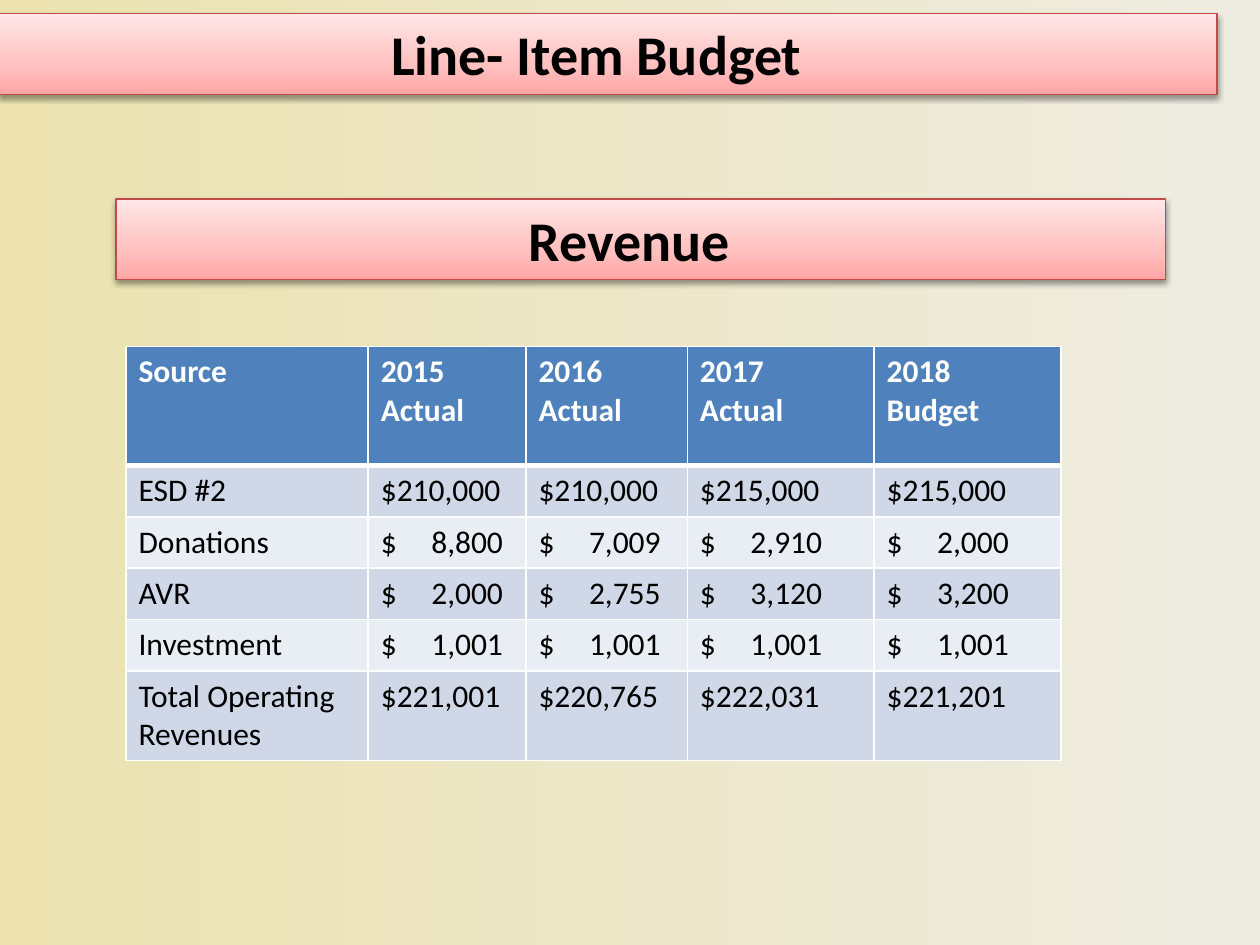
from copy import deepcopy
from dataclasses import dataclass

from lxml import etree
from pptx import Presentation
from pptx.dml.color import RGBColor
from pptx.enum.shapes import MSO_SHAPE
from pptx.enum.text import MSO_ANCHOR, PP_ALIGN
from pptx.oxml.ns import qn
from pptx.util import Inches, Pt

RECTANGLE = MSO_SHAPE.RECTANGLE
CENTER = PP_ALIGN.CENTER
TOP = MSO_ANCHOR.TOP


@dataclass(frozen=True)
class Theme:
    font: str = "Calibri"
    heading_size: int = 32
    table_size: int = 18
    text: str = "000000"
    header_text: str = "FFFFFF"
    header_fill: str = "4F81BD"
    bands: tuple = ("D0D8E8", "E9EDF4")
    grid: str = "FFFFFF"
    banner_line: str = "BF4C48"
    banner_stops: tuple = ((0, "FFA6A5"), (35, "FFC0BF"), (100, "FFE7E7"))
    background_stops: tuple = ((0, "EBE2AF"), (97, "EEECE1"))


THEME = Theme()
COLUMN_WIDTHS = (1.92, 1.25, 1.28, 1.48, 1.48)
ROW_HEIGHTS = (0.95, 0.41, 0.41, 0.41, 0.41, 0.7)
AMOUNT_TAB = Inches(0.97)
REVENUE = (
    ("Source", "2015 Actual", "2016 Actual", "2017\nActual", "2018 Budget"),
    ("ESD #2", "$210,000", "$210,000", "$215,000", "$215,000"),
    ("Donations", "$\t8,800", "$\t7,009", "$\t2,910", "$\t2,000"),
    ("AVR", "$\t2,000", "$\t2,755", "$\t3,120", "$\t3,200"),
    ("Investment", "$\t1,001", "$\t1,001", "$\t1,001", "$\t1,001"),
    ("Total Operating Revenues", "$221,001", "$220,765", "$222,031", "$221,201"),
)


def apply_gradient(fill, owner, stops, angle):
    """Fill with the given (percent, colour) stops; owner holds the fill's XML."""
    fill.gradient()
    fill.gradient_angle = angle
    stop_list = owner.find(".//" + qn("a:gsLst"))
    while len(stop_list) < len(stops):
        stop_list.append(deepcopy(stop_list[-1]))
    for stop, (position, color) in zip(fill.gradient_stops, stops):
        stop.position = position / 100
        stop.color.rgb = RGBColor.from_string(color)


def add_shadow(shape):
    shape.shadow.inherit = False
    effects = shape.element.spPr.find(qn("a:effectLst"))
    shadow = etree.SubElement(effects, qn("a:outerShdw"), blurRad=str(Pt(3.1)),
                              dist=str(Pt(1.6)), dir="5400000", rotWithShape="0")
    color = etree.SubElement(shadow, qn("a:srgbClr"), val="000000")
    etree.SubElement(color, qn("a:alpha"), val="38000")


def style_run(run, size, color, bold):
    for name, value in {"name": THEME.font, "size": Pt(size), "bold": bold}.items():
        setattr(run.font, name, value)
    run.font.color.rgb = RGBColor.from_string(color)


def add_banner(slide, heading, left, top, width, height):
    banner = slide.shapes.add_shape(RECTANGLE, left, top, width, height)
    apply_gradient(banner.fill, banner.element, THEME.banner_stops, 90)
    banner.line.color.rgb = RGBColor.from_string(THEME.banner_line)
    banner.line.width = Pt(0.75)
    add_shadow(banner)
    frame = banner.text_frame
    settings = {"word_wrap": True, "vertical_anchor": TOP, "margin_right": Inches(0.28)}
    for name, value in settings.items():
        setattr(frame, name, value)
    paragraph = frame.paragraphs[0]
    paragraph.alignment = CENTER
    run = paragraph.add_run()
    run.text = heading
    style_run(run, THEME.heading_size, THEME.text, True)


def set_borders(cell, widths):
    """Draw cell borders; they must come before the fill in the cell's XML."""
    properties = cell._tc.get_or_add_tcPr()
    for index, (side, width) in enumerate(widths.items()):
        line = etree.Element(qn("a:" + side), w=str(Pt(width)))
        solid = etree.SubElement(line, qn("a:solidFill"))
        etree.SubElement(solid, qn("a:srgbClr"), val=THEME.grid)
        properties.insert(index, line)


def fill_cell(cell, text, fill, color, bold):
    cell.fill.solid()
    cell.fill.fore_color.rgb = RGBColor.from_string(fill)
    cell.text = text
    for paragraph in cell.text_frame.paragraphs:
        if "\t" in text:
            tabs = etree.SubElement(paragraph._p.get_or_add_pPr(), qn("a:tabLst"))
            etree.SubElement(tabs, qn("a:tab"), pos=str(AMOUNT_TAB), algn="r")
        for run in paragraph.runs:
            style_run(run, THEME.table_size, color, bold)


def add_revenue_table(slide, left, top, width, height):
    table = slide.shapes.add_table(len(REVENUE), len(COLUMN_WIDTHS),
                                   left, top, width, height).table
    for column, share in zip(table.columns, COLUMN_WIDTHS):
        column.width = round(width * share / sum(COLUMN_WIDTHS))
    for row, share in zip(table.rows, ROW_HEIGHTS):
        row.height = round(height * share / sum(ROW_HEIGHTS))
    for r, values in enumerate(REVENUE):
        header = r == 0
        fill = THEME.header_fill if header else THEME.bands[(r - 1) % 2]
        color = THEME.header_text if header else THEME.text
        borders = {"lnL": 1, "lnR": 1, "lnT": 3 if r == 1 else 1, "lnB": 3 if header else 1}
        for c, text in enumerate(values):
            cell = table.cell(r, c)
            fill_cell(cell, text, fill, color, header)
            set_borders(cell, borders)


def main():
    deck = Presentation()
    deck.slide_width, deck.slide_height = Inches(10), Inches(7.5)
    slide = deck.slides.add_slide(deck.slide_layouts[6])
    apply_gradient(slide.background.fill, slide.element, THEME.background_stops, 0)

    # Slide title and section heading
    add_banner(slide, "Line- Item Budget", Inches(-0.01), Inches(0.11), Inches(9.67), Inches(0.64))
    add_banner(slide, "Revenue", Inches(0.92), Inches(1.58), Inches(8.33), Inches(0.64))

    # Revenue by source and year
    add_revenue_table(slide, Inches(1), Inches(2.75), Inches(7.42), Inches(3.27))
    deck.save("out.pptx")


if __name__ == "__main__":
    main()
